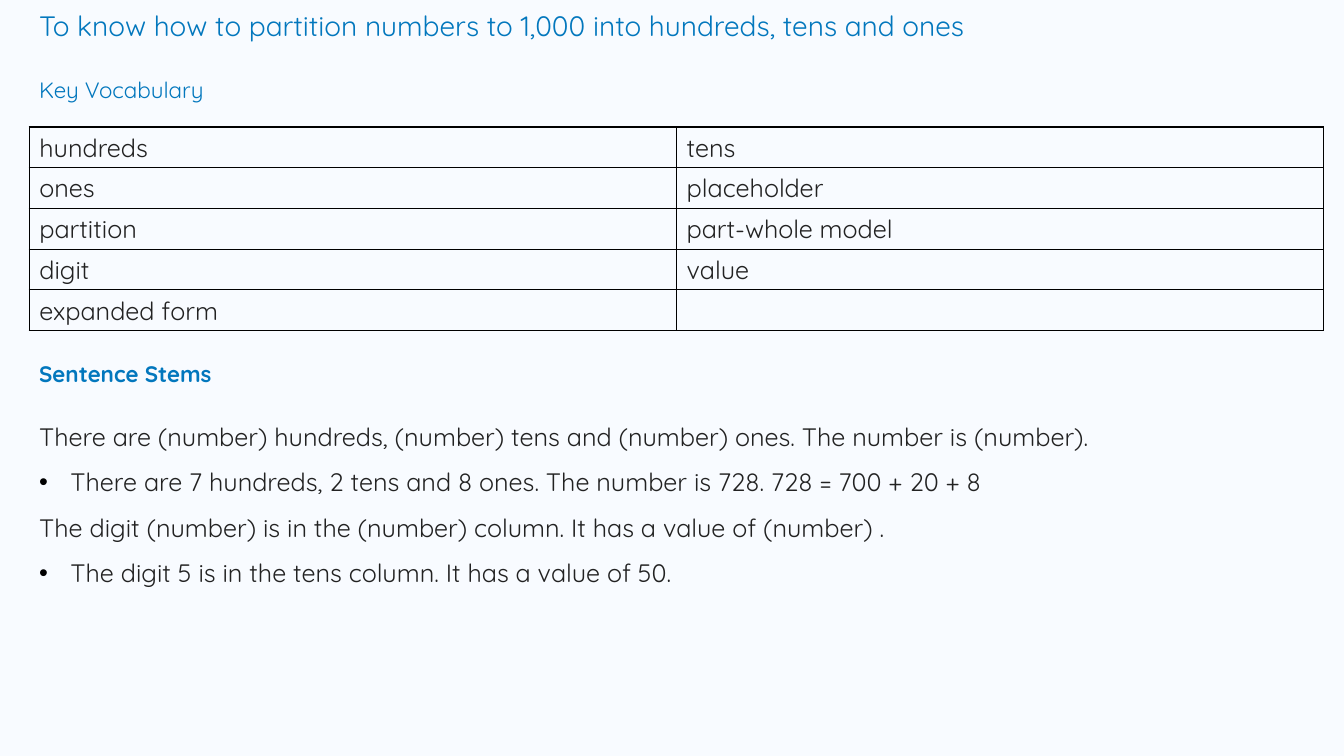
from lxml.etree import SubElement
from pptx import Presentation
from pptx.dml.color import RGBColor
from pptx.oxml import parse_xml
from pptx.oxml.ns import nsdecls, qn
from pptx.util import Inches, Pt

LEFT = 2.18
WORDS = [
    ("hundreds", "tens"),
    ("ones", "placeholder"),
    ("partition", "part-whole model"),
    ("digit", "value"),
    ("expanded form", ""),
]
STEMS = [
    ("There are (number) hundreds, (number) tens and (number) ones. The number is (number).", False),
    ("There are 7 hundreds, 2 tens and 8 ones. The number is 728. 728 = 700 + 20 + 8", True),
    ("The digit (number) is in the (number) column. It has a value of (number) .", False),
    ("The digit 5 is in the tens column. It has a value of 50.", True),
]


def color(value):
    return RGBColor.from_string(value)


class Lesson:
    """Draws lesson elements on one slide, placed in percent of its size."""

    face = "Quicksand"
    blue = "0277BD"
    ink = "222222"
    black = "000000"
    paper = "F8FBFF"

    def __init__(self):
        self.deck = Presentation()
        self.deck.slide_width = Inches(13.33)
        self.deck.slide_height = Inches(7.5)
        self.slide = self.deck.slides.add_slide(self.deck.slide_layouts[6])
        fill = self.slide.background.fill
        fill.solid()
        fill.fore_color.rgb = color(self.paper)

    def area(self, left, top, width, height):
        wide, high = self.deck.slide_width, self.deck.slide_height
        return [round(part * side / 100) for part, side in
                zip((left, top, width, height), (wide, high, wide, high))]

    def style(self, line, size, shade, bold=False):
        font = line.font
        font.name, font.size, font.bold = self.face, Pt(size), bold
        font.color.rgb = color(shade)

    def box(self, *place):
        frame = self.slide.shapes.add_textbox(*self.area(*place)).text_frame
        frame.word_wrap = True
        return frame

    def title(self, text, place, size=16, bold=False):
        line = self.box(*place).paragraphs[0]
        line.text = text
        self.style(line, size, self.blue, bold)

    def bullet(self, line):
        props = line._p.get_or_add_pPr()
        props.set("marL", str(Inches(0.31)))
        props.set("indent", str(-Inches(0.31)))
        tint = SubElement(props, qn("a:buClr"))
        SubElement(tint, qn("a:srgbClr"), val=self.black)
        SubElement(props, qn("a:buFont"), typeface="Arial")
        SubElement(props, qn("a:buChar"), char="•")

    def stems(self, items, place):
        frame = self.box(*place)
        for index, (text, dotted) in enumerate(items):
            line = frame.add_paragraph() if index else frame.paragraphs[0]
            line.text = text
            line.line_spacing = 1.5
            if dotted:
                self.bullet(line)
            self.style(line, 18, self.ink)

    def border(self, cell):
        props = cell._tc.get_or_add_tcPr()
        for index, side in enumerate("LRTB"):
            props.insert(index, parse_xml(
                f'<a:ln{side} {nsdecls("a")} w="{Pt(1)}"><a:solidFill>'
                f'<a:srgbClr val="{self.black}"/></a:solidFill></a:ln{side}>'))

    def table(self, rows, place):
        shape = self.slide.shapes.add_table(len(rows), len(rows[0]), *self.area(*place))
        grid = shape.table
        grid.first_row = grid.horz_banding = False
        for row, texts in enumerate(rows):
            for col, text in enumerate(texts):
                cell = grid.cell(row, col)
                cell.fill.background()
                self.border(cell)
                line = cell.text_frame.paragraphs[0]
                line.text = text
                self.style(line, 18, self.ink)


def main():
    page = Lesson()
    page.title("To know how to partition numbers to 1,000 into hundreds, tens and ones",
               (LEFT, 0.53, 92.57, 5.87), size=20)
    page.title("Key Vocabulary", (LEFT, 9.47, 22.28, 6.13))
    page.table(WORDS, (LEFT, 16.8, 96.32, 26.93))
    page.title("Sentence Stems", (LEFT, 46.93, 22.28, 6.13), bold=True)
    page.stems(STEMS, (LEFT, 53.07, 96.25, 25.6))
    page.deck.save("out.pptx")


if __name__ == "__main__":
    main()
